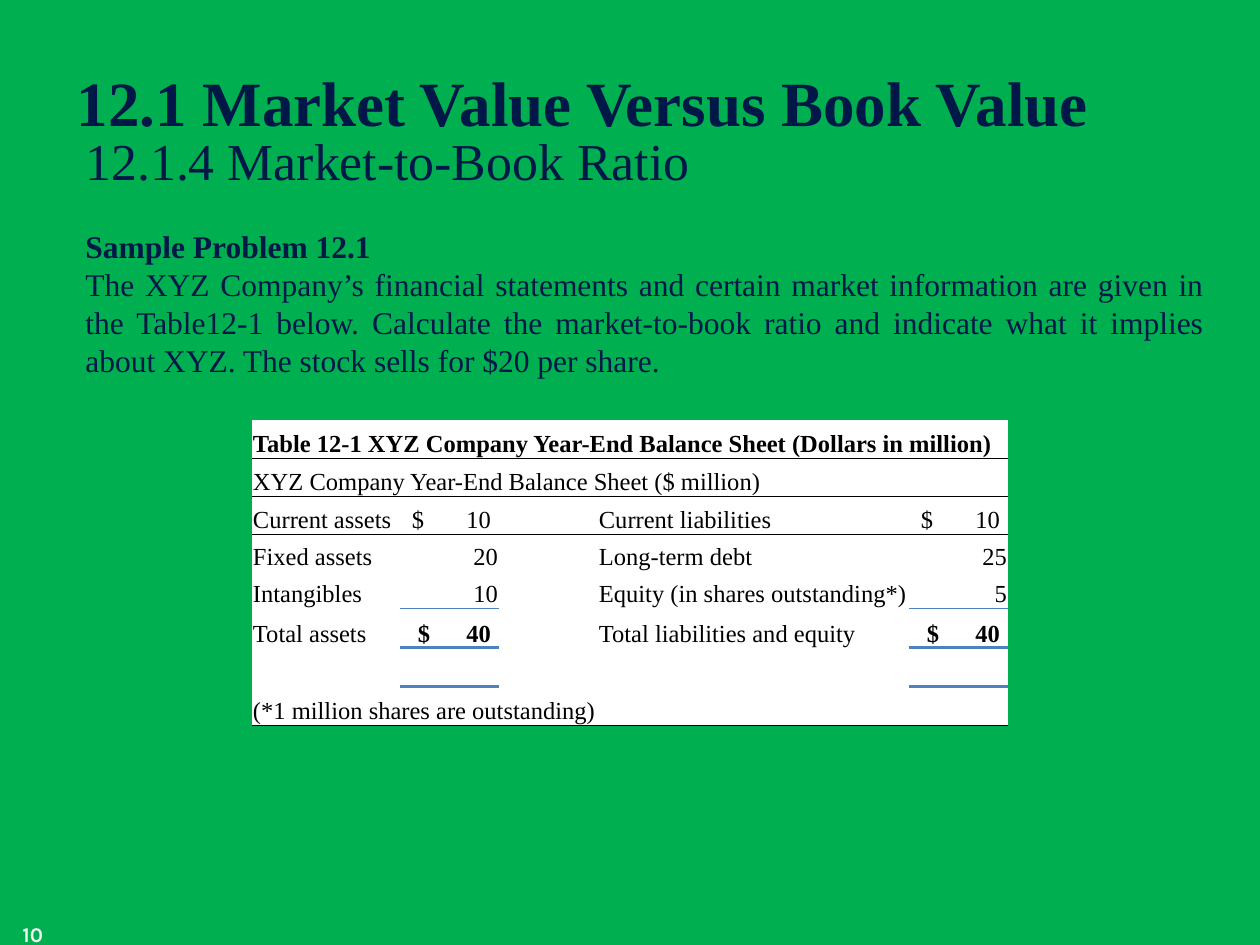
from lxml import etree
from pptx import Presentation
from pptx.dml.color import RGBColor
from pptx.enum.text import MSO_ANCHOR, PP_ALIGN
from pptx.oxml.ns import qn
from pptx.util import Emu, Pt

LEFT, RIGHT, JUSTIFY = PP_ALIGN.LEFT, PP_ALIGN.RIGHT, PP_ALIGN.JUSTIFY
TOP, MIDDLE, BOTTOM = MSO_ANCHOR.TOP, MSO_ANCHOR.MIDDLE, MSO_ANCHOR.BOTTOM

GREEN = RGBColor(0x00, 0xB0, 0x50)
NAVY = RGBColor(0x00, 0x18, 0x48)
BLACK = RGBColor(0x00, 0x00, 0x00)
WHITE = RGBColor(0xFF, 0xFF, 0xFF)
PALE = RGBColor(0xF2, 0xF2, 0xF2)
BLUE = RGBColor(0x4F, 0x81, 0xBD)

SERIF = "Times New Roman"
PLAIN_TABLE = "{2D5ABB26-0587-4C30-8999-92F81FD0307C}"
COLUMNS = [148, 99, 99, 311, 99]
ROWS = [38, 38, 38, 37, 37, 40, 39, 38]
AMOUNT_EDGE = 91

BALANCE_SHEET = [
    ["Table 12-1 XYZ Company Year-End Balance Sheet (Dollars in million)", "", "", "", ""],
    ["XYZ Company Year-End Balance Sheet ($ million)", "", "", "", ""],
    ["Current assets", "$\t10", "", "Current liabilities", "$\t10"],
    ["Fixed assets", "20", "", "Long-term debt", "25"],
    ["Intangibles", "10", "", "Equity (in shares outstanding*)", "5"],
    ["Total assets", "$\t40", "", "Total liabilities and equity", "$\t40"],
    ["", "", "", "", ""],
    ["(*1 million shares are outstanding)", "", "", "", ""],
]
MERGES = [(0, 4), (1, 3), (7, 2)]
TOTAL_ROW = 5
AMOUNT_COLUMNS = (1, 4)
RULES = [
    (0, range(5), BLACK, 0.5),
    (1, range(5), BLACK, 0.5),
    (4, AMOUNT_COLUMNS, BLUE, 0.5),
    (5, AMOUNT_COLUMNS, BLUE, 2),
    (7, range(5), BLACK, 0.5),
]


def px(length):
    return Emu(round(length * 914400 / 126))


def style(paragraph, size, color, bold=False, face=SERIF, align=LEFT):
    paragraph.alignment = align
    font = paragraph.font
    font.name, font.size, font.bold = face, Pt(size), bold
    font.color.rgb = color


def add_text(slide, box, text):
    frame = slide.shapes.add_textbox(*map(px, box)).text_frame
    frame.word_wrap = True
    frame.vertical_anchor = TOP
    frame.text = text
    return frame.paragraphs


def add_heading(slide, left, top, width):
    title = slide.shapes.title
    title.left, title.top, title.width, title.height = map(px, (left, top, width, 88))
    title.text_frame.text = "12.1 Market Value Versus Book Value"
    title.text_frame.vertical_anchor = MIDDLE
    style(title.text_frame.paragraphs[0], 36, NAVY, bold=True)

    subtitle = add_text(slide, (left + 9, top + 78, width, 63), "12.1.4 Market-to-Book Ratio")[0]
    subtitle.line_spacing = 0.8
    style(subtitle, 29.6, NAVY)


def add_problem(slide, box):
    label, question = add_text(
        slide, box,
        "Sample Problem 12.1\n"
        "The XYZ Company’s financial statements and certain market information are given in "
        "the Table12-1 below. Calculate the market-to-book ratio and indicate what it implies "
        "about XYZ. The stock sells for $20 per share.")
    style(label, 18, NAVY, bold=True, align=JUSTIFY)
    style(question, 18, NAVY, align=JUSTIFY)


def add_right_tab(paragraph, position):
    tabs = etree.SubElement(paragraph._p.get_or_add_pPr(), qn("a:tabLst"))
    etree.SubElement(tabs, qn("a:tab"), pos=str(px(position)), algn="r")


def fill_cell(cell, text, bold, is_amount):
    cell.fill.solid()
    cell.fill.fore_color.rgb = WHITE
    cell.vertical_anchor = BOTTOM
    cell.margin_left = cell.margin_right = cell.margin_top = px(1)
    cell.margin_bottom = 0
    cell.text = text
    paragraph = cell.text_frame.paragraphs[0]
    has_dollar = "\t" in text
    if has_dollar:
        indent = 18 if bold else 12
        cell.margin_left = px(indent)
        add_right_tab(paragraph, AMOUNT_EDGE - indent)
    align = RIGHT if is_amount and not has_dollar else LEFT
    style(paragraph, 14, BLACK, bold=bold, align=align)


def add_border(cell, side, color, width):
    properties = cell._tc.get_or_add_tcPr()
    line = etree.Element(qn(side), w=str(Pt(width)))
    fill = etree.SubElement(line, qn("a:solidFill"))
    etree.SubElement(fill, qn("a:srgbClr"), val=str(color))
    properties.find(qn("a:solidFill")).addprevious(line)


def add_balance_sheet(slide, left, top):
    box = (left, top, sum(COLUMNS), sum(ROWS))
    table = slide.shapes.add_table(len(ROWS), len(COLUMNS), *map(px, box)).table
    table.first_row = table.horz_banding = False
    table._tbl.tblPr.find(qn("a:tableStyleId")).text = PLAIN_TABLE
    for column, width in zip(table.columns, COLUMNS):
        column.width = px(width)
    for row, height in zip(table.rows, ROWS):
        row.height = px(height)

    for r, texts in enumerate(BALANCE_SHEET):
        for c, text in enumerate(texts):
            is_amount = c in AMOUNT_COLUMNS
            bold = r == 0 or (r == TOTAL_ROW and is_amount)
            fill_cell(table.cell(r, c), text, bold, is_amount)
    for r, last in MERGES:
        table.cell(r, 0).merge(table.cell(r, last))
    for r, columns, color, width in RULES:
        for c in columns:
            add_border(table.cell(r, c), "a:lnB", color, width)
            if r + 1 < len(ROWS):
                add_border(table.cell(r + 1, c), "a:lnT", color, width)


def add_page_number(slide, box):
    style(add_text(slide, box, "10")[0], 12, PALE, bold=True, face="Karla")


def main():
    deck = Presentation()
    deck.slide_width, deck.slide_height = px(1260), px(945)
    slide = deck.slides.add_slide(deck.slide_layouts[5])
    slide.background.fill.solid()
    slide.background.fill.fore_color.rgb = GREEN
    add_problem(slide, (73, 221, 1144, 624))
    add_page_number(slide, (10, 915, 294, 30))
    add_heading(slide, 64, 57, 1134)
    add_balance_sheet(slide, 252, 420)
    deck.save("out.pptx")


if __name__ == "__main__":
    main()
